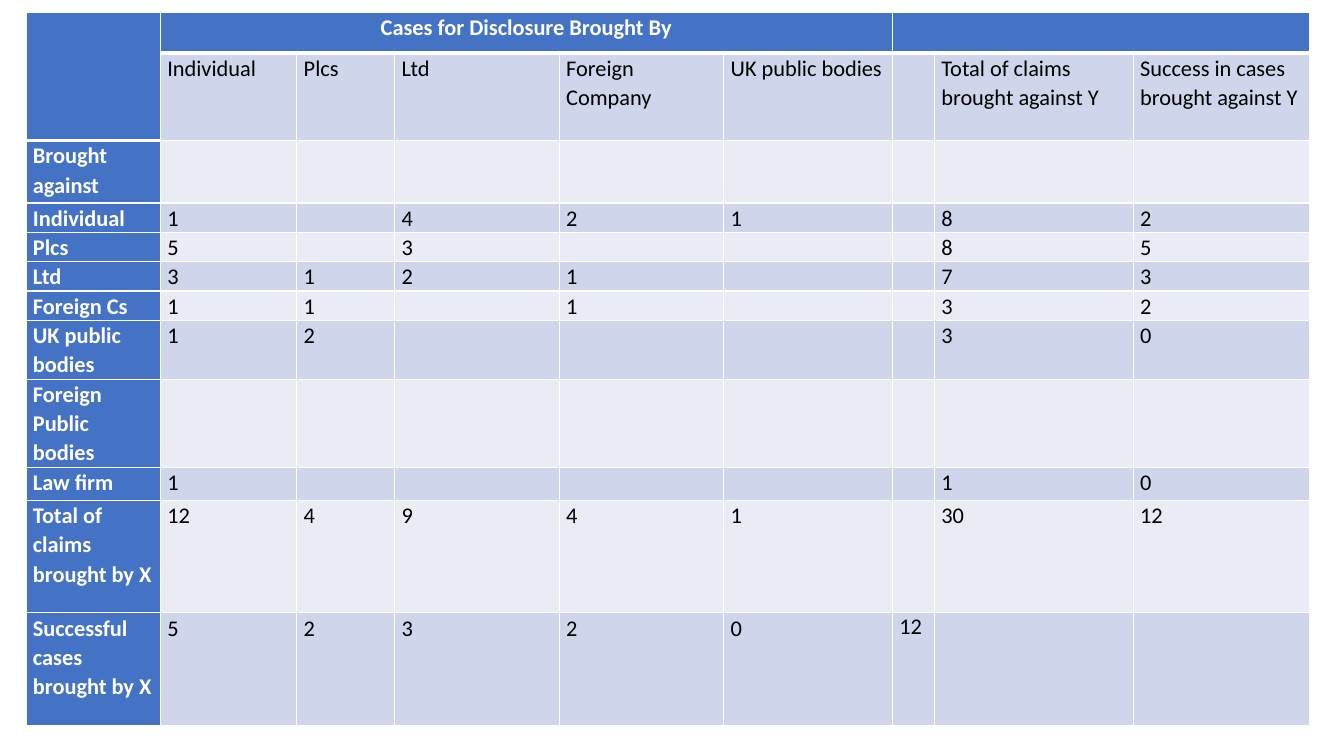
from dataclasses import dataclass

from lxml import etree
from pptx import Presentation
from pptx.dml.color import RGBColor
from pptx.enum import text
from pptx.oxml import ns
from pptx.util import Pt


@dataclass(frozen=True)
class Theme:
    """Colours, type and line widths of the slide."""
    header: str = "4472C4"
    bands: tuple = ("E9EBF5", "CFD5EA")
    light: str = "FFFFFF"
    dark: str = "000000"
    font: str = "Calibri"
    size: int = 16
    spacing: float = 1.07
    thin: int = 1
    heavy: int = 3


THEME = Theme()
COLUMN_WIDTHS = [96, 97.5, 70, 117.5, 117.5, 120.5, 30, 142, 126]
ROW_HEIGHTS = [29.5, 62.5, 44.5, 21, 21, 21, 21, 42, 63, 23.5, 80.5, 80.5]
GAP_COLUMN = 6
CASES = [
    ["", "Cases for Disclosure Brought By"],
    ["", "Individual", "Plcs", "Ltd", "Foreign Company", "UK public bodies", "",
     "Total of claims brought against Y", "Success in cases brought against Y"],
    ["Brought against"],
    ["Individual", "1", "", "4", "2", "1", "", "8", "2"],
    ["Plcs", "5", "", "3", "", "", "", "8", "5"],
    ["Ltd", "3", "1", "2", "1", "", "", "7", "3"],
    ["Foreign Cs", "1", "1", "", "1", "", "", "3", "2"],
    ["UK public bodies", "1", "2", "", "", "", "", "3", "0"],
    ["Foreign Public bodies"],
    ["Law firm", "1", "", "", "", "", "", "1", "0"],
    ["Total of claims brought by X", "12", "4", "9", "4", "1", "", "30", "12"],
    ["Successful cases brought by X", "5", "2", "3", "2", "0", "12"],
]


def set_borders(cell, top, bottom):
    """Draw the four borders, with the given top and bottom widths."""
    properties = cell._tc.get_or_add_tcPr()
    widths = {"L": THEME.thin, "R": THEME.thin, "T": top, "B": bottom}
    for position, (side, width) in enumerate(widths.items()):
        line = etree.Element(ns.qn(f"a:ln{side}"), w=str(Pt(width)))
        fill = etree.SubElement(line, ns.qn("a:solidFill"))
        etree.SubElement(fill, ns.qn("a:srgbClr"), val=THEME.light)
        properties.insert(position, line)


def write_cell(cell, words, is_header, spacing, alignment):
    """Put one run of words in a cell, or size its empty line."""
    cell.margin_left = cell.margin_right = Pt(5)
    cell.margin_top = cell.margin_bottom = Pt(0)
    paragraph = cell.text_frame.paragraphs[0]
    paragraph.line_spacing = spacing
    paragraph.alignment = alignment
    if not words:
        paragraph._p.get_or_add_endParaRPr().set("sz", str(THEME.size * 100))
        return
    run = paragraph.add_run()
    run.text = words
    run.font.name = THEME.font
    run.font.size = Pt(THEME.size)
    run.font.bold = is_header
    run.font.color.rgb = RGBColor.from_string(THEME.light if is_header else THEME.dark)


def add_cases_table(slide, left, top):
    """Place the table of claims with its corner at the given point."""
    table = slide.shapes.add_table(
        len(ROW_HEIGHTS), len(COLUMN_WIDTHS), Pt(left), Pt(top),
        Pt(sum(COLUMN_WIDTHS)), Pt(sum(ROW_HEIGHTS))).table
    for column, width in zip(table.columns, COLUMN_WIDTHS):
        column.width = Pt(width)
    for row, height in zip(table.rows, ROW_HEIGHTS):
        row.height = Pt(height)
    for row, words in enumerate(CASES):
        words = words + [""] * (len(COLUMN_WIDTHS) - len(words))
        for column, entry in enumerate(words):
            cell = table.cell(row, column)
            is_header = row == 0 or column == 0
            colour = THEME.header if is_header else THEME.bands[row % 2]
            cell.fill.solid()
            cell.fill.fore_color.rgb = RGBColor.from_string(colour)
            header_end = 1 if column == 0 else 0
            set_borders(cell, THEME.heavy if row == header_end + 1 else THEME.thin,
                        THEME.heavy if row <= header_end else THEME.thin)
            write_cell(cell, entry, is_header,
                       1.0 if column == GAP_COLUMN else THEME.spacing,
                       text.PP_ALIGN.CENTER if row == 0 else text.PP_ALIGN.LEFT)
    for first, last in [((0, 0), (1, 0)), ((0, 1), (0, 5)), ((0, 6), (0, 8))]:
        table.cell(*first).merge(table.cell(*last))


def main():
    """Build and save the slide."""
    presentation = Presentation()
    presentation.slide_width, presentation.slide_height = Pt(960), Pt(540)
    slide = presentation.slides.add_slide(presentation.slide_layouts[6])
    add_cases_table(slide, 18.5, 8.5)
    presentation.save("out.pptx")


if __name__ == "__main__":
    main()
